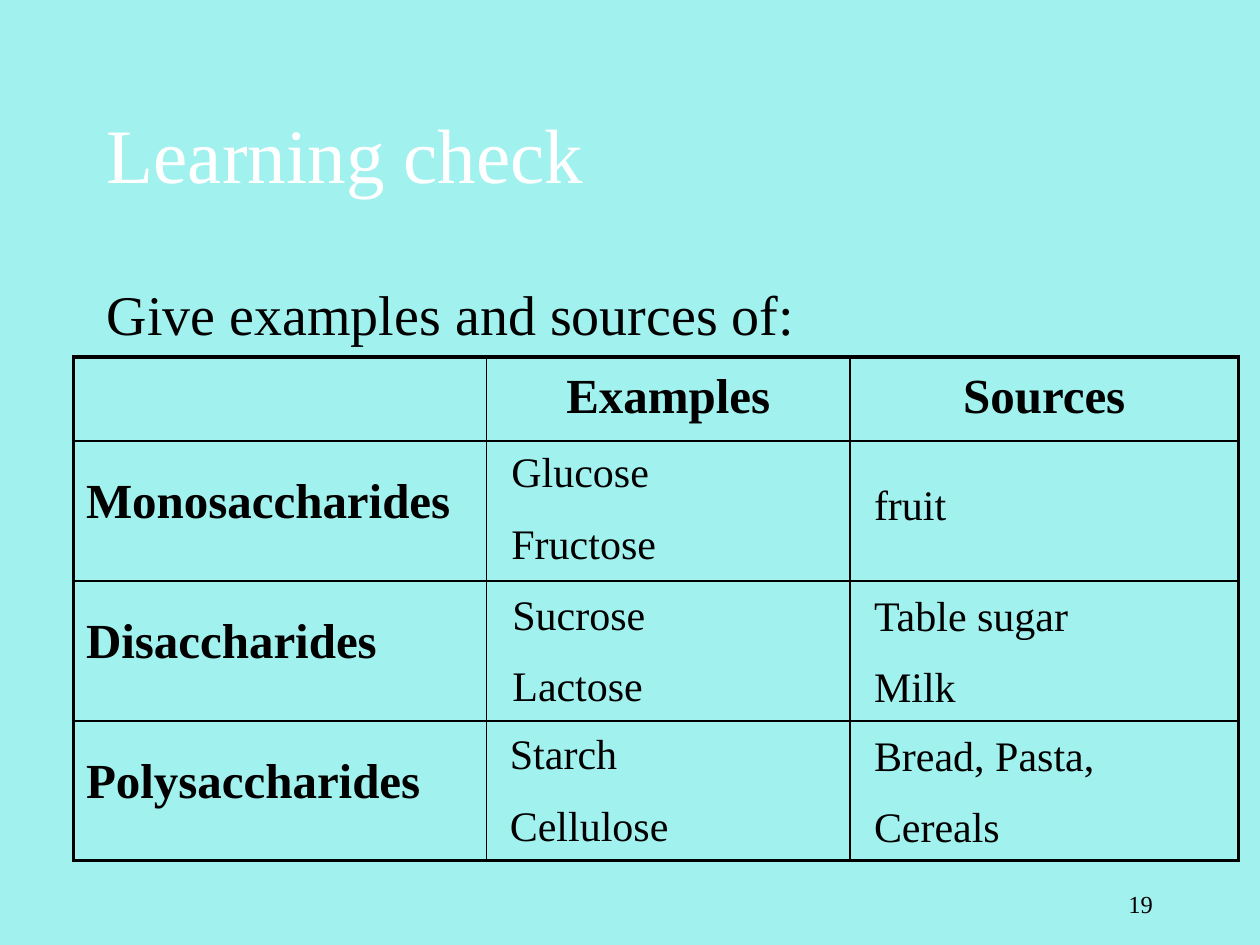
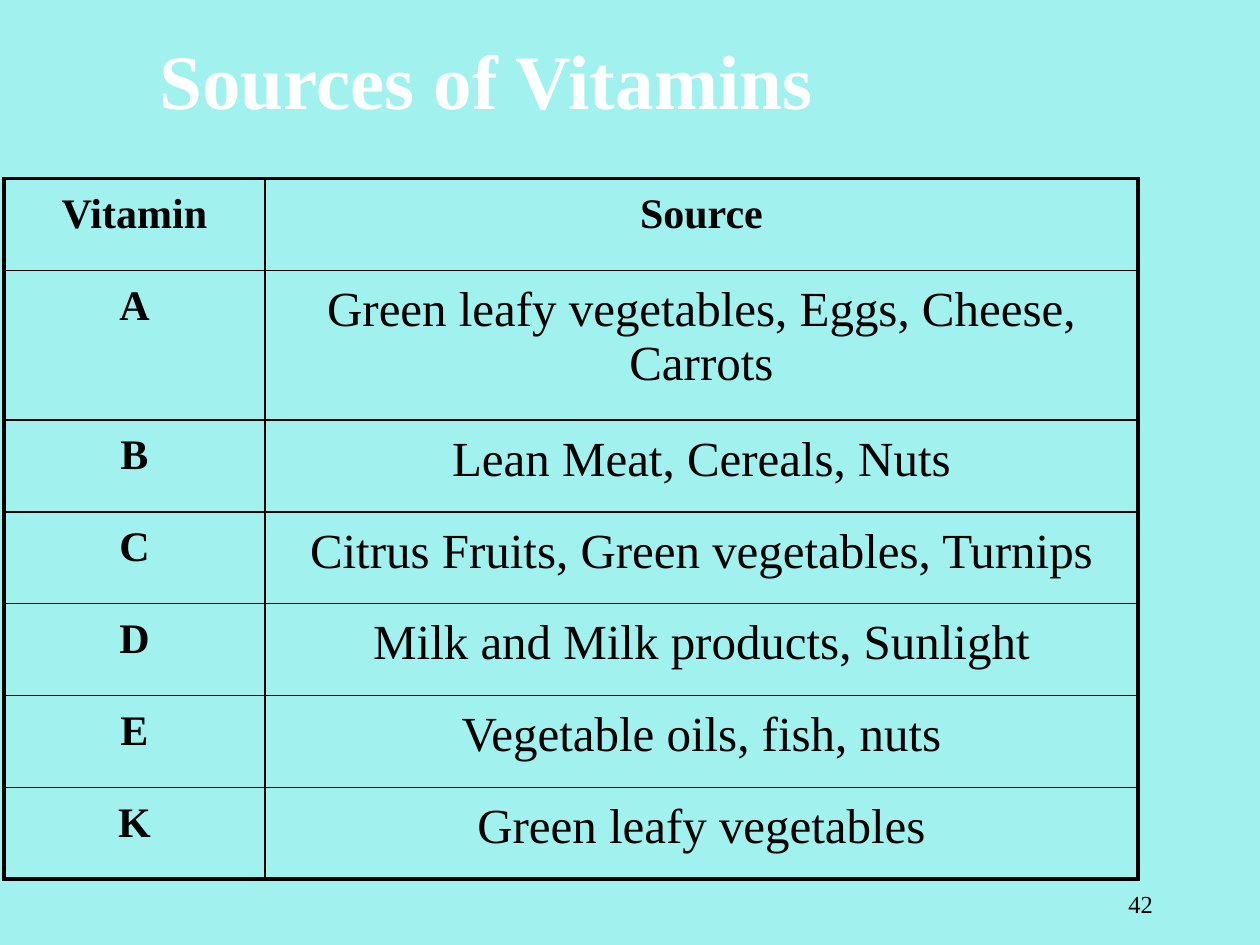
"""Build two nutrition slides: a carbohydrate check and a table of vitamin sources."""
import pptx
import pptx.dml.color
import pptx.enum.text
import pptx.oxml.ns
import pptx.util
from lxml import etree

Cm, Pt = pptx.util.Cm, pptx.util.Pt
ALIGN, ANCHOR = pptx.enum.text.PP_ALIGN, pptx.enum.text.MSO_ANCHOR
FONT = "Times New Roman"
COLORS = {"back": "A1F1EE", "title": "FFFFFF", "ink": "000000"}
OUTER, INNER = 2.25, 1
NUMBER_BOX = (18.21, 17.58, 5.28, 1.27)

CHECK = {
    "title": "Learning check", "title_box": (1.9, 1.48, 21.59, 3.18), "bold": False,
    "number": "19",
    "prompt": "Give examples and sources of:", "prompt_box": (1.9, 5.5, 21.59, 1.9),
    "at": (1.48, 7.2), "cols": [8.33, 7.32, 7.84], "rows": [1.69] + [2.82] * 3,
    "cells": [
        ["", "Examples", "Sources"],
        ["Monosaccharides", "", ""],
        ["Disaccharides", "", ""],
        ["Polysaccharides", "", ""],
    ],
}
ANSWERS = [
    (["Glucose", "Fructose"], (10.06, 8.86, 7.09, 2.79)),
    (["fruit"], (17.37, 9.53, 7.59, 1.27)),
    (["Sucrose", "Lactose"], (10.08, 11.73, 6.99, 2.79)),
    (["Table sugar", "Milk"], (17.37, 11.76, 7.59, 2.79)),
    (["Starch", "Cellulose"], (10.03, 14.55, 6.35, 2.79)),
    (["Bread, Pasta,", "Cereals"], (17.37, 14.58, 7.19, 2.79)),
]
VITAMINS = {
    "title": "Sources of Vitamins", "title_box": (2.96, 0, 21.59, 3.18), "bold": True,
    "number": "42",
    "at": (0.08, 3.6), "cols": [5.26, 17.6], "rows": [1.85, 3.02] + [1.85] * 5,
    "cells": [
        ["Vitamin", "Source"],
        ["A", "Green leafy vegetables, Eggs, Cheese, Carrots"],
        ["B", "Lean Meat, Cereals, Nuts"],
        ["C", "Citrus Fruits, Green vegetables, Turnips"],
        ["D", "Milk and Milk products, Sunlight"],
        ["E", "Vegetable oils, fish, nuts"],
        ["K", "Green leafy vegetables"],
    ],
}


def rgb(name):
    return pptx.dml.color.RGBColor.from_string(COLORS[name])


def add(parent, tag, **attrs):
    return etree.SubElement(parent, pptx.oxml.ns.qn(tag), attrs)


def write(tf, lines, size, bold=False, color="ink", align=ALIGN.LEFT, before=0):
    for i, line in enumerate(lines):
        p = tf.paragraphs[0] if i == 0 else tf.add_paragraph()
        p.alignment = align
        if before:
            p.space_before = Pt(0)
            spacing = p._p.pPr.find(pptx.oxml.ns.qn("a:spcBef"))
            spacing.remove(spacing[0])
            add(spacing, "a:spcPct", val=str(before * 1000))
        r = p.add_run()
        r.text = line
        r.font.name, r.font.size, r.font.bold = FONT, Pt(size), bold
        r.font.color.rgb = rgb(color)


def place(sp, box):
    sp.left, sp.top, sp.width, sp.height = map(Cm, box)
    sp.text_frame.auto_size = pptx.enum.text.MSO_AUTO_SIZE.NONE
    return sp.text_frame


def add_text(s, lines, box, size, **style):
    tf = s.shapes.add_textbox(*map(Cm, box)).text_frame
    tf.word_wrap = True
    write(tf, lines, size, **style)
    return tf


def add_slide(prs, layout, data):
    s = prs.slides.add_slide(prs.slide_layouts[layout])
    tf = place(s.shapes.title, data["title_box"])
    tf.vertical_anchor = ANCHOR.MIDDLE
    write(tf, [data["title"]], 44, data["bold"], "title")
    tf = add_text(s, [data["number"]], NUMBER_BOX, 14, align=ALIGN.RIGHT)
    tf.vertical_anchor = ANCHOR.MIDDLE
    return s


def set_borders(cell, outer_sides):
    tcPr = cell._tc.get_or_add_tcPr()
    for side in "LRTB":
        width = OUTER if side in outer_sides else INNER
        ln = add(tcPr, f"a:ln{side}", w=str(Pt(width)))
        add(add(ln, "a:solidFill"), "a:srgbClr", val=COLORS["ink"])


def add_table(s, data, style_cell):
    cols, rows = data["cols"], data["rows"]
    box = (*data["at"], sum(cols), sum(rows))
    table = s.shapes.add_table(len(rows), len(cols), *map(Cm, box)).table
    table.first_row = table.horz_banding = False
    for col, width in zip(table.columns, cols):
        col.width = Cm(width)
    for row, height in zip(table.rows, rows):
        row.height = Cm(height)
    for i, texts in enumerate(data["cells"]):
        for j, text in enumerate(texts):
            cell = table.cell(i, j)
            edges = {"L": j == 0, "R": j == len(cols) - 1, "T": i == 0, "B": i == len(rows) - 1}
            set_borders(cell, [side for side, outer in edges.items() if outer])
            cell.fill.background()
            if text:
                top, size, bold, align = style_cell(i, j)
                cell.margin_top, cell.margin_bottom = Cm(top), Cm(0.13)
                write(cell.text_frame, [text], size, bold, align=align, before=20)


def check_style(i, j):
    return (0.25, 28, True, ALIGN.CENTER) if i == 0 else (0.69, 28, True, ALIGN.LEFT)


def vitamin_style(i, j):
    heading = i == 0 or j == 0
    return 0.25, 24 if heading else 28, heading, ALIGN.CENTER


def main():
    prs = pptx.Presentation()
    prs.slide_width, prs.slide_height = Cm(25.4), Cm(19.05)
    fill = prs.slide_master.background.fill
    fill.solid()
    fill.fore_color.rgb = rgb("back")

    s = add_slide(prs, 1, CHECK)
    tf = place(s.placeholders[1], CHECK["prompt_box"])
    write(tf, [CHECK["prompt"]], 32, before=20)
    pPr = tf.paragraphs[0]._p.pPr
    pPr.set("marL", str(Cm(0.95)))
    pPr.set("indent", str(Cm(-0.95)))
    add(pPr, "a:buNone")
    add_table(s, CHECK, check_style)
    for lines, box in ANSWERS:
        add_text(s, lines, box, 24, before=50)

    s = add_slide(prs, 5, VITAMINS)
    add_table(s, VITAMINS, vitamin_style)
    prs.save("out.pptx")


if __name__ == "__main__":
    main()
